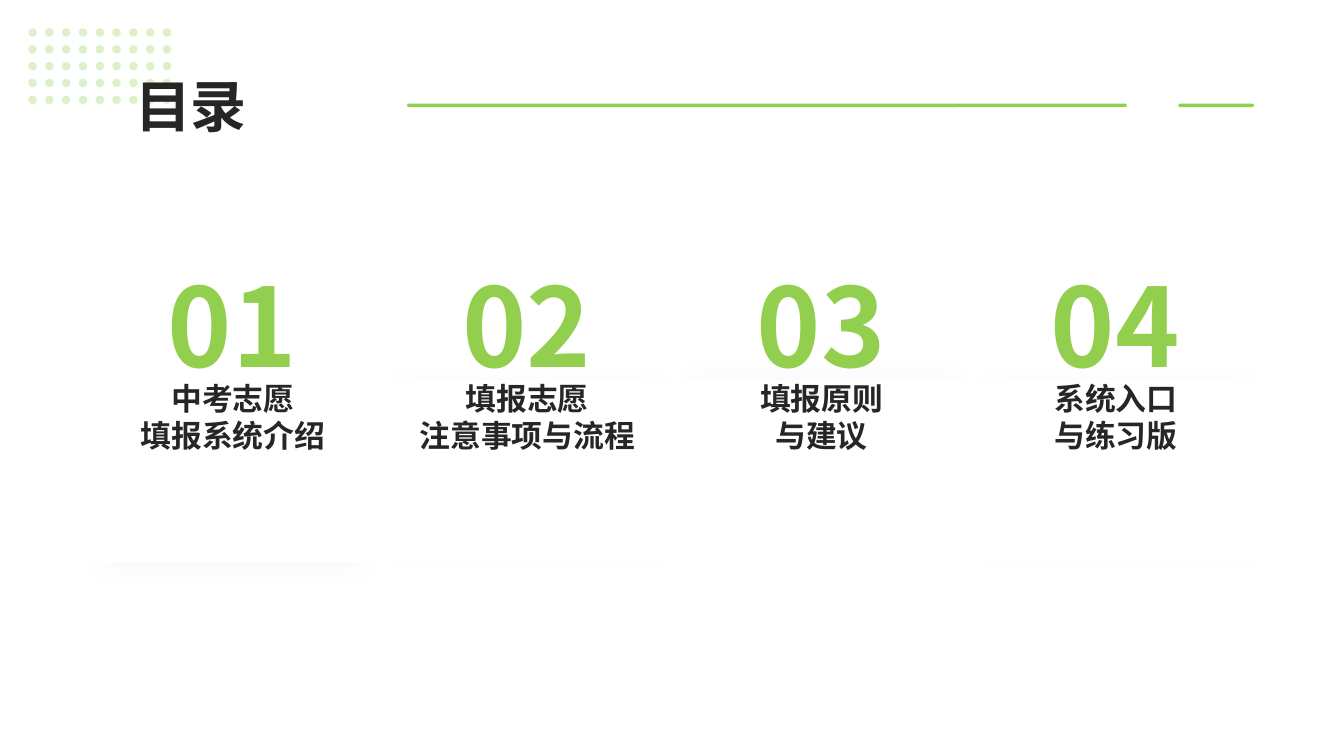
from math import cos, pi, sin

from lxml.etree import SubElement
from pptx import Presentation
from pptx.dml.color import RGBColor
from pptx.enum.shapes import MSO_SHAPE
from pptx.enum.text import MSO_ANCHOR, PP_ALIGN
from pptx.oxml.ns import qn
from pptx.util import Inches, Pt

COLS, ROWS = 80, 45
HUES = {"green": "92CF4E", "ink": "262626", "white": "FFFFFF", "shade": "C4D3FA"}
FONT = "Noto Sans CJK SC"


class Deck:
    """Draws on one slide; lengths are cells of an 80 by 45 grid."""

    def __init__(self):
        self.prs = Presentation()
        self.prs.slide_width = Inches(13.33)
        self.prs.slide_height = Inches(7.5)
        self.slide = self.prs.slides.add_slide(self.prs.slide_layouts[6])
        self.shapes = self.slide.shapes
        self.fill(self.slide.background, "white")

    def x(self, cols):
        return round(self.prs.slide_width * cols / COLS)

    def y(self, rows):
        return round(self.prs.slide_height * rows / ROWS)

    def area(self, left, top, wide, high):
        return self.x(left), self.y(top), self.x(wide), self.y(high)

    def fill(self, item, hue):
        item.fill.solid()
        item.fill.fore_color.rgb = RGBColor.from_string(HUES[hue])

    def plain(self, shape, hue):
        shape.shadow.inherit = False
        shape.line.fill.background()
        self.fill(shape, hue)
        return shape

    def box(self, area, hue, kind=MSO_SHAPE.RECTANGLE):
        return self.plain(self.shapes.add_shape(kind, *self.area(*area)), hue)

    def bar(self, area):
        shape = self.box(area, "green", MSO_SHAPE.ROUNDED_RECTANGLE)
        shape.adjustments[0] = 0.5

    def card(self, area):
        shape = self.box(area, "white")
        effects = shape._element.spPr.find(qn("a:effectLst"))
        glow = SubElement(effects, qn("a:outerShdw"), blurRad=str(Pt(16.5)),
                          dist=str(Pt(7.2)), dir="0", algn="ctr", rotWithShape="0")
        tint = SubElement(glow, qn("a:srgbClr"), val=HUES["shade"])
        SubElement(tint, qn("a:alpha"), val="18000")

    def dots(self, left, top, cols, rows, size, sides=16):
        form = None
        for n in range(cols * rows):
            row, col = divmod(n, cols)
            ring = [(self.x(left + col + size / 2 * (1 + cos(2 * pi * k / sides))),
                     self.y(top + row + size / 2 * (1 + sin(2 * pi * k / sides))))
                    for k in range(sides)]
            if form is None:
                form = self.shapes.build_freeform(*ring[0])
            else:
                form.move_to(*ring[0])
            form.add_line_segments(ring[1:], close=True)
        shape = self.plain(form.convert_to_shape(), "green")
        tint = shape._element.spPr.find(qn("a:solidFill"))[0]
        SubElement(tint, qn("a:alpha"), val="30000")

    def text(self, area, paras, size, hue, align=PP_ALIGN.CENTER, anchor=MSO_ANCHOR.BOTTOM):
        frame = self.shapes.add_textbox(*self.area(*area)).text_frame
        frame.word_wrap = True
        frame.vertical_anchor = anchor
        frame.margin_left = frame.margin_right = 0
        frame.margin_top = frame.margin_bottom = 0
        for n, lines in enumerate(paras):
            para = frame.add_paragraph() if n else frame.paragraphs[0]
            para.alignment = align
            para.line_spacing = Pt(size * 1.2)
            for k, line in enumerate(lines):
                if k:
                    para.add_line_break()
                self.run(para, line, size, hue)

    def run(self, para, words, size, hue):
        run = para.add_run()
        run.text = words
        font = run.font
        font.name, font.size, font.bold = FONT, Pt(size), True
        font.color.rgb = RGBColor.from_string(HUES[hue])
        SubElement(run._r.get_or_add_rPr(), qn("a:ea"), typeface=FONT)


def main():
    topics = [
        [["中考志愿"], ["填报系统介绍"]],
        [["填报志愿"], ["注意事项与流程"]],
        [["填报原则", "与建议"]],
        [["系统入口"], ["与练习版"]],
    ]
    step = 17.52
    deck = Deck()
    for left, wide in ((24.23, 42.84), (70.14, 4.5)):
        deck.bar((left, 6.17, wide, 0.2))
    deck.dots(1.69, 1.69, cols=9, rows=5, size=0.5)
    for n in range(len(topics)):
        deck.text((7.62 + n * step, 15.18, 12.42, 7.98), [[f"{n + 1:02}"]], 78, "green")
    for n, top in ((1, 23.22), (2, 22.62), (3, 23.22), (0, 24.06)):
        deck.card((5.64 + n * 17.58, top, 15.24, 9.42))
    deck.box((3.36, 22.62, 73.56, 10.86), "white")
    deck.text((8.04, 0.9, 63.54, 7.38), [["目录"]], 40, "ink", PP_ALIGN.LEFT)
    for n, topic in enumerate(topics):
        deck.text((6.84 + n * step, 22.62, 14.04, 9.42), topic, 22, "ink",
                  anchor=MSO_ANCHOR.TOP)
    deck.prs.save("out.pptx")


if __name__ == "__main__":
    main()
